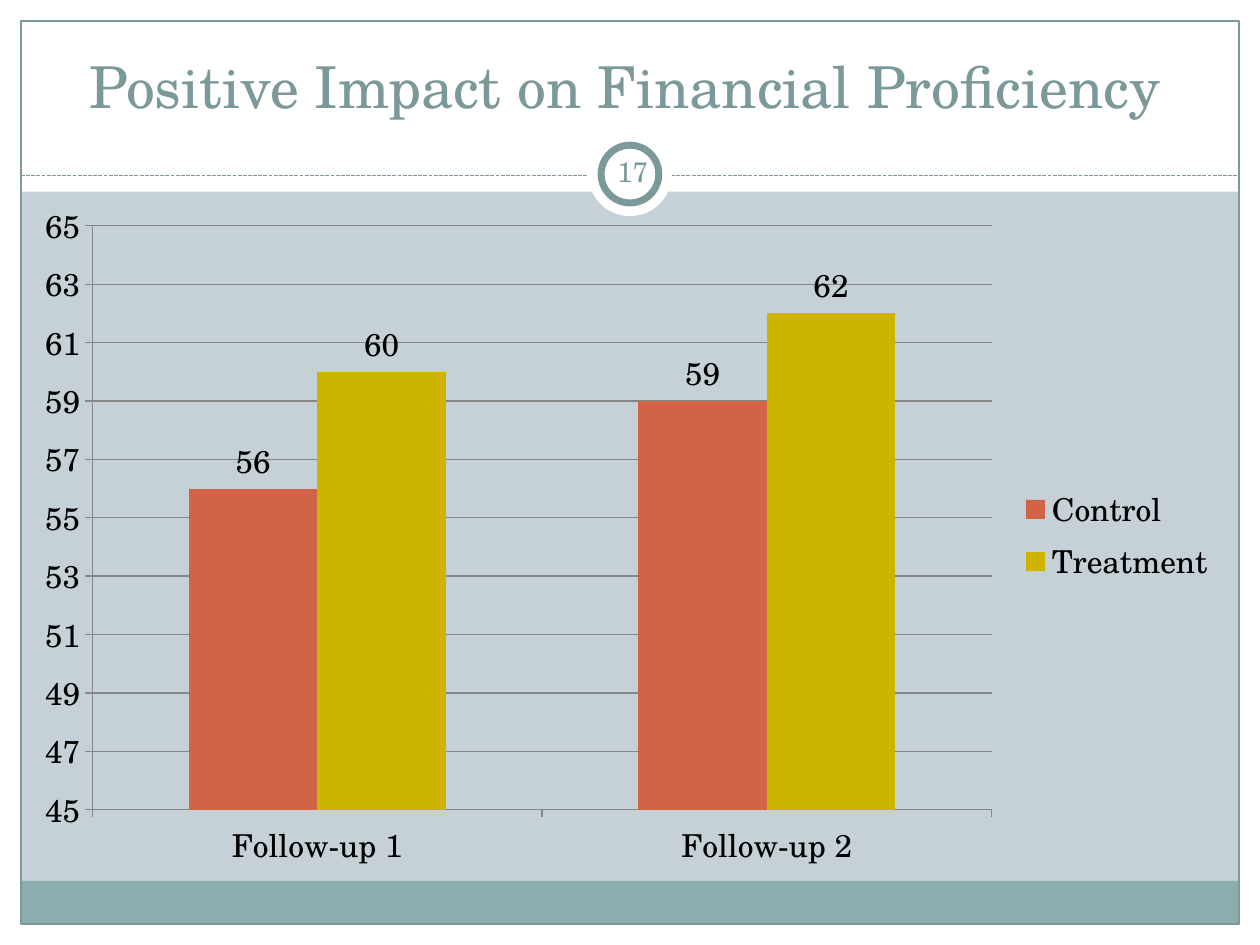
from dataclasses import dataclass

from lxml.etree import SubElement
from pptx import Presentation
from pptx.chart.data import CategoryChartData
from pptx.dml.color import RGBColor
from pptx.enum.chart import XL_CHART_TYPE, XL_LABEL_POSITION, XL_LEGEND_POSITION, XL_TICK_MARK
from pptx.enum.dml import MSO_LINE
from pptx.enum.shapes import MSO_CONNECTOR, MSO_SHAPE
from pptx.enum.text import MSO_ANCHOR, PP_ALIGN
from pptx.oxml.ns import qn
from pptx.util import Pt


@dataclass(frozen=True)
class Theme:
    """Colours, font and type sizes of the slide."""
    background: RGBColor = RGBColor.from_string("C5D1D7")
    paper: RGBColor = RGBColor.from_string("FFFFFF")
    footer: RGBColor = RGBColor.from_string("8CADAE")
    accent: RGBColor = RGBColor.from_string("7C999A")
    ink: RGBColor = RGBColor.from_string("000000")
    grid: RGBColor = RGBColor.from_string("868686")
    control: RGBColor = RGBColor.from_string("D16349")
    treatment: RGBColor = RGBColor.from_string("CCB400")
    font: str = "TeX Gyre Schola"
    title_size: int = 33
    number_size: int = 16
    chart_size: int = 18


THEME = Theme()
WIDTH, HEIGHT, MARGIN = 720, 540, 12


def add_plain(slide, preset, box, fill=None, line=None, weight=0.75):
    """Add a preset shape with an optional fill and outline."""
    plain = slide.shapes.add_shape(preset, *map(Pt, box))
    plain.shadow.inherit = False
    if fill is None:
        plain.fill.background()
    else:
        plain.fill.solid()
        plain.fill.fore_color.rgb = fill
    if line is None:
        plain.line.fill.background()
    else:
        plain.line.color.rgb = line
        plain.line.width = Pt(weight)


def add_label(slide, box, wording, size, anchor, inset):
    """Add one centred line of accent-coloured text."""
    label = slide.shapes.add_textbox(*map(Pt, box)).text_frame
    label.word_wrap = True
    label.vertical_anchor = anchor
    label.margin_left = label.margin_right = Pt(inset)
    label.margin_top = label.margin_bottom = Pt(inset)
    line = label.paragraphs[0]
    line.alignment = PP_ALIGN.CENTER
    run = line.add_run()
    run.text = wording
    run.font.name = THEME.font
    run.font.size = Pt(size)
    run.font.color.rgb = THEME.accent


def add_frame(slide, box):
    """Draw the white margins, the footer band, the border and the divider."""
    left, top, width, height = box
    right, bottom = left + width, top + height
    margins = [
        (0, bottom, WIDTH, HEIGHT - bottom),
        (0, 0, WIDTH, 109.5),
        (0, 0, left, HEIGHT),
        (right, 0, WIDTH - right, HEIGHT),
    ]
    for margin in margins:
        add_plain(slide, MSO_SHAPE.RECTANGLE, margin, THEME.paper)
    add_plain(slide, MSO_SHAPE.RECTANGLE, (left, bottom - 24.7, width, 24.7), THEME.footer)
    add_plain(slide, MSO_SHAPE.RECTANGLE, box, line=THEME.accent)
    divider = slide.shapes.add_connector(
        MSO_CONNECTOR.STRAIGHT, Pt(left), Pt(100.5), Pt(right), Pt(100.5))
    divider.line.color.rgb = THEME.accent
    divider.line.width = Pt(0.75)
    divider.line.dash_style = MSO_LINE.SQUARE_DOT
    SubElement(divider._element.spPr, qn("a:effectLst"))


def add_number_badge(slide, box, number):
    """Draw the ringed slide number on the divider."""
    left, top, side, _ = box
    ring = (left + 7.5, top + 7.5, side - 15, side - 15)
    add_plain(slide, MSO_SHAPE.OVAL, box, THEME.paper)
    add_plain(slide, MSO_SHAPE.OVAL, ring, THEME.paper, THEME.accent, 4)
    add_label(slide, (left + 7.5, top + 5, 36, 34.5), number,
              THEME.number_size, MSO_ANCHOR.MIDDLE, 3.6)


def add_proficiency_chart(slide, box):
    """Add the clustered columns of control and treatment scores."""
    scores = CategoryChartData(number_format="0")
    scores.categories = ["Follow-up 1", "Follow-up 2"]
    scores.add_series("Control", [56, 59])
    scores.add_series("Treatment", [60, 62])
    chart = slide.shapes.add_chart(
        XL_CHART_TYPE.COLUMN_CLUSTERED, *map(Pt, box), scores).chart
    chart.has_title = False
    chart.font.name = THEME.font
    chart.font.size = Pt(THEME.chart_size)
    chart.font.color.rgb = THEME.ink

    chart.has_legend = True
    chart.legend.position = XL_LEGEND_POSITION.RIGHT
    chart.legend.include_in_layout = False

    score_axis = chart.value_axis
    score_axis.minimum_scale, score_axis.maximum_scale = 45, 65
    score_axis.major_unit = 2
    score_axis.tick_labels.number_format = "#,##0"
    score_axis.tick_labels.number_format_is_linked = False
    score_axis.has_major_gridlines = True
    for axis in (score_axis, chart.category_axis):
        axis.major_tick_mark = XL_TICK_MARK.OUTSIDE
        axis.format.line.color.rgb = THEME.grid
        axis.format.line.width = Pt(0.75)
    score_axis.major_gridlines.format.line.color.rgb = THEME.grid
    score_axis.major_gridlines.format.line.width = Pt(0.75)

    columns = chart.plots[0]
    columns.gap_width, columns.overlap = 150, 0
    columns.vary_by_categories = False
    for series, colour in zip(columns.series, (THEME.control, THEME.treatment)):
        series.format.fill.solid()
        series.format.fill.fore_color.rgb = colour
        labels = series.data_labels
        labels.show_value = True
        labels.number_format = "0"
        labels.number_format_is_linked = False
        labels.position = XL_LABEL_POSITION.OUTSIDE_END


def main():
    """Build and save the slide."""
    deck = Presentation()
    deck.slide_width, deck.slide_height = Pt(WIDTH), Pt(HEIGHT)
    slide = deck.slides.add_slide(deck.slide_layouts[6])
    slide.background.fill.solid()
    slide.background.fill.fore_color.rgb = THEME.background
    add_frame(slide, (MARGIN, MARGIN, WIDTH - 2 * MARGIN, HEIGHT - 2 * MARGIN))
    add_number_badge(slide, (336, 75.5, 48, 48), "17")
    add_label(slide, (MARGIN, 0, 690, 72), "Positive Impact on Financial Proficiency",
              THEME.title_size, MSO_ANCHOR.BOTTOM, 3.6)
    add_proficiency_chart(slide, (MARGIN, 108, 690, 396))
    deck.save("out.pptx")


if __name__ == "__main__":
    main()
